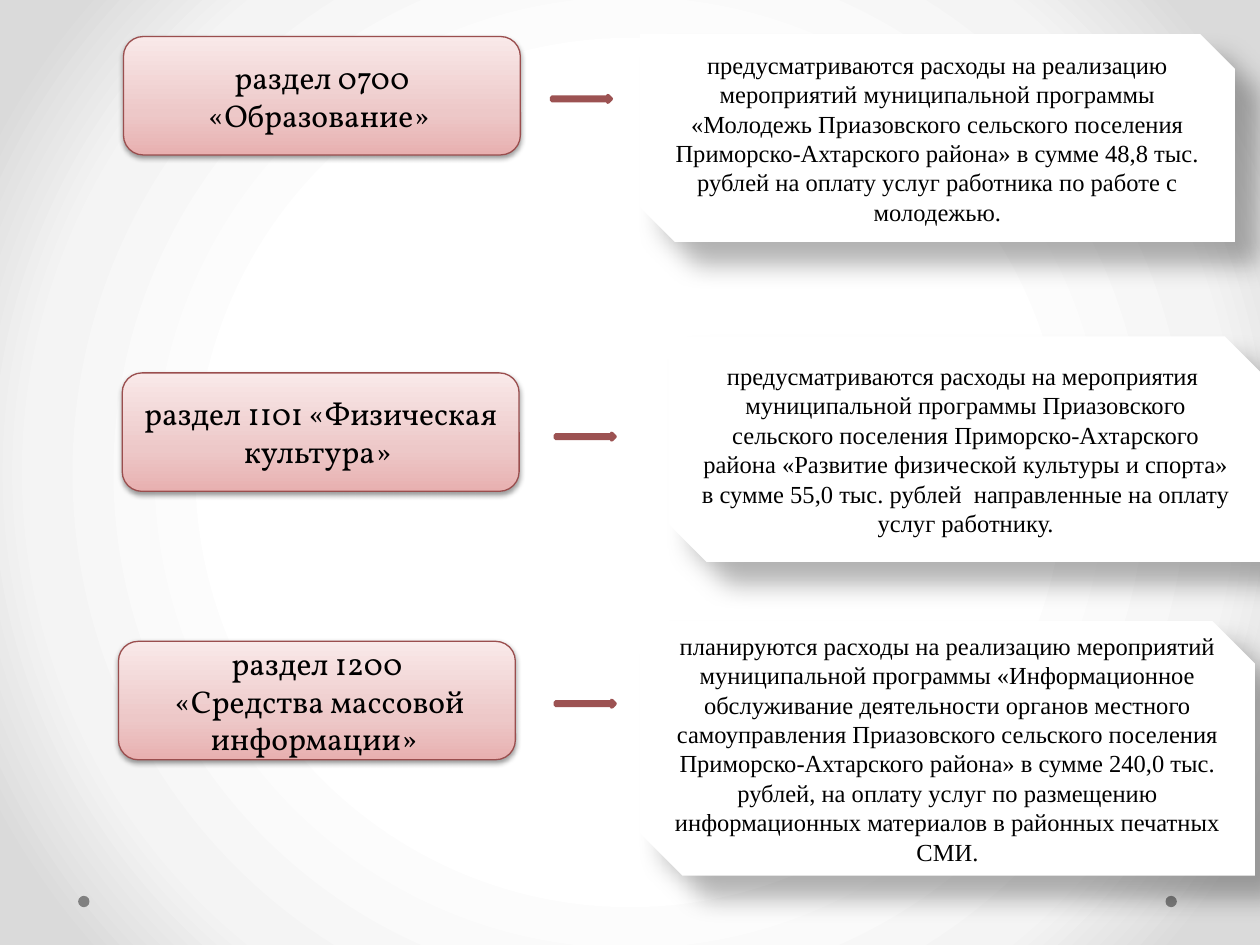
from lxml import etree
from pptx import Presentation
from pptx import util as u
from pptx.dml.color import RGBColor
from pptx.enum import shapes, text
from pptx.oxml import parse_xml
from pptx.oxml.ns import qn

COLORS = {
    "black": "000000", "white": "FFFFFF", "dot": "808080",
    "label_line": "9A4E4E", "arrow": "9C5252",
}
BACKDROP_STOPS = [(50, "FFFFFF"), (76, "F4F4F4"), (92, "DADADA")]
LABEL_STOPS = [(0, "E8B0B0"), (35, "EDC8C8"), (100, "F9E9E9")]
BACKDROP_SHADE = '<a:path path="circle"><a:fillToRect l="50000" t="50000" r="50000" b="50000"/></a:path>'
LABEL_SHADE = '<a:lin ang="16200000" scaled="0"/>'
LABEL_SHADOW = {"opacity": 38, "blur": 3.1, "distance": 1.6, "angle": 90}
DETAIL_SHADOW = {"opacity": 30, "blur": 15, "distance": 18, "angle": 45}
LABEL_FONT = {"name": "Vollkorn", "size": u.Pt(18)}
DETAIL_FONT = {"name": "Times New Roman", "size": u.Pt(14)}
LABEL_SIZE = (3.15, 0.94)
ARROW_SIZE = (0.47, 0.05)
DOT_SIZE = (0.09, 0.09)
DOTS = [(9.25, 7.11), (0.62, 7.11)]

SECTIONS = [
    {
        "label": "раздел 0700 «Образование» ",
        "label_at": (0.98, 0.29),
        "arrow_at": (4.38, 0.76),
        "detail": "предусматриваются расходы на реализацию мероприятий муниципальной программы "
                  "«Молодежь Приазовского сельского поселения Приморско-Ахтарского района» "
                  "в сумме 48,8 тыс. рублей на оплату услуг работника по работе с молодежью.",
        "detail_box": (5.08, 0.27, 4.72, 1.65),
    },
    {
        "label": "раздел 1101 «Физическая культура» ",
        "label_at": (0.97, 2.96),
        "arrow_at": (4.41, 3.44),
        "detail": "предусматриваются расходы на мероприятия  муниципальной программы "
                  "Приазовского сельского поселения Приморско-Ахтарского района "
                  "«Развитие физической культуры и спорта» в сумме 55,0 тыс. рублей  "
                  "направленные на оплату услуг работнику.",
        "detail_box": (5.31, 2.67, 4.71, 1.79),
    },
    {
        "label": "раздел 1200\n «Средства массовой информации» ",
        "label_at": (0.94, 5.09),
        "arrow_at": (4.41, 5.56),
        "detail": "планируются расходы на реализацию мероприятий муниципальной программы "
                  "«Информационное обслуживание деятельности органов местного самоуправления "
                  "Приазовского сельского поселения Приморско-Ахтарского района» "
                  "в сумме 240,0 тыс. рублей, на оплату услуг по размещению "
                  "информационных материалов в районных печатных СМИ.",
        "detail_box": (5.08, 4.93, 4.88, 2.02),
    },
]
DRAWING_NS = "http://schemas.openxmlformats.org/drawingml/2006/main"
SLIDE_NS = "http://schemas.openxmlformats.org/presentationml/2006/main"


def rgb(name):
    return RGBColor.from_string(COLORS[name])


def gradient_xml(stops, shade):
    marks = "".join(
        f'<a:gs pos="{position * 1000}"><a:srgbClr val="{color}"/></a:gs>'
        for position, color in stops
    )
    return (f'<a:gradFill xmlns:a="{DRAWING_NS}" rotWithShape="1">'
            f"<a:gsLst>{marks}</a:gsLst>{shade}</a:gradFill>")


def paint_background(slide):
    background = parse_xml(
        f'<p:bg xmlns:p="{SLIDE_NS}" xmlns:a="{DRAWING_NS}"><p:bgPr>'
        f"{gradient_xml(BACKDROP_STOPS, BACKDROP_SHADE)}<a:effectLst/></p:bgPr></p:bg>"
    )
    slide.element.find(qn("p:cSld")).insert(0, background)


def add_figure(slide, kind, box, fill="white", line=None, width=0):
    shape = slide.shapes.add_shape(kind, *map(u.Inches, box))
    shape.shadow.inherit = False
    shape.fill.solid()
    shape.fill.fore_color.rgb = rgb(fill)
    if line:
        shape.line.color.rgb = rgb(line)
        shape.line.width = u.Pt(width)
    else:
        shape.line.fill.background()
    return shape


def add_gradient(shape, stops, shade):
    properties = shape.element.spPr
    properties.replace(properties.find(qn("a:solidFill")), parse_xml(gradient_xml(stops, shade)))


def add_shadow(shape, opacity, blur, distance, angle):
    effects = shape.element.spPr.find(qn("a:effectLst"))
    shadow = etree.SubElement(
        effects, qn("a:outerShdw"), blurRad=str(u.Pt(blur)), dist=str(u.Pt(distance)),
        dir=str(angle * 60000), algn="tl", rotWithShape="0",
    )
    color = etree.SubElement(shadow, qn("a:srgbClr"), val=COLORS["black"])
    etree.SubElement(color, qn("a:alpha"), val=str(opacity * 1000))


def write_text(shape, content, font):
    frame = shape.text_frame
    frame.text = content
    frame.word_wrap = True
    frame.vertical_anchor = text.MSO_ANCHOR.MIDDLE
    for paragraph in frame.paragraphs:
        paragraph.alignment = text.PP_ALIGN.CENTER
        for run in paragraph.runs:
            for name, value in font.items():
                setattr(run.font, name, value)
            run.font.color.rgb = rgb("black")


def add_section(slide, section):
    kinds = shapes.MSO_SHAPE
    label = add_figure(slide, kinds.ROUNDED_RECTANGLE, section["label_at"] + LABEL_SIZE,
                       line="label_line", width=0.75)
    add_gradient(label, LABEL_STOPS, LABEL_SHADE)
    add_shadow(label, **LABEL_SHADOW)
    write_text(label, section["label"], LABEL_FONT)

    detail = add_figure(slide, kinds.SNIP_2_DIAG_RECTANGLE, section["detail_box"])
    add_shadow(detail, **DETAIL_SHADOW)
    write_text(detail, section["detail"], DETAIL_FONT)

    add_figure(slide, kinds.RIGHT_ARROW, section["arrow_at"] + ARROW_SIZE,
               line="arrow", width=2.25)


def main():
    """Build the slide of budget sections and their planned expenses."""
    presentation = Presentation()
    presentation.slide_width, presentation.slide_height = u.Inches(10), u.Inches(7.5)
    slide = presentation.slides.add_slide(presentation.slide_layouts[6])
    paint_background(slide)
    for dot_at in DOTS:
        add_figure(slide, shapes.MSO_SHAPE.OVAL, dot_at + DOT_SIZE, fill="dot")
    for section in SECTIONS:
        add_section(slide, section)
    presentation.save("out.pptx")


if __name__ == "__main__":
    main()
